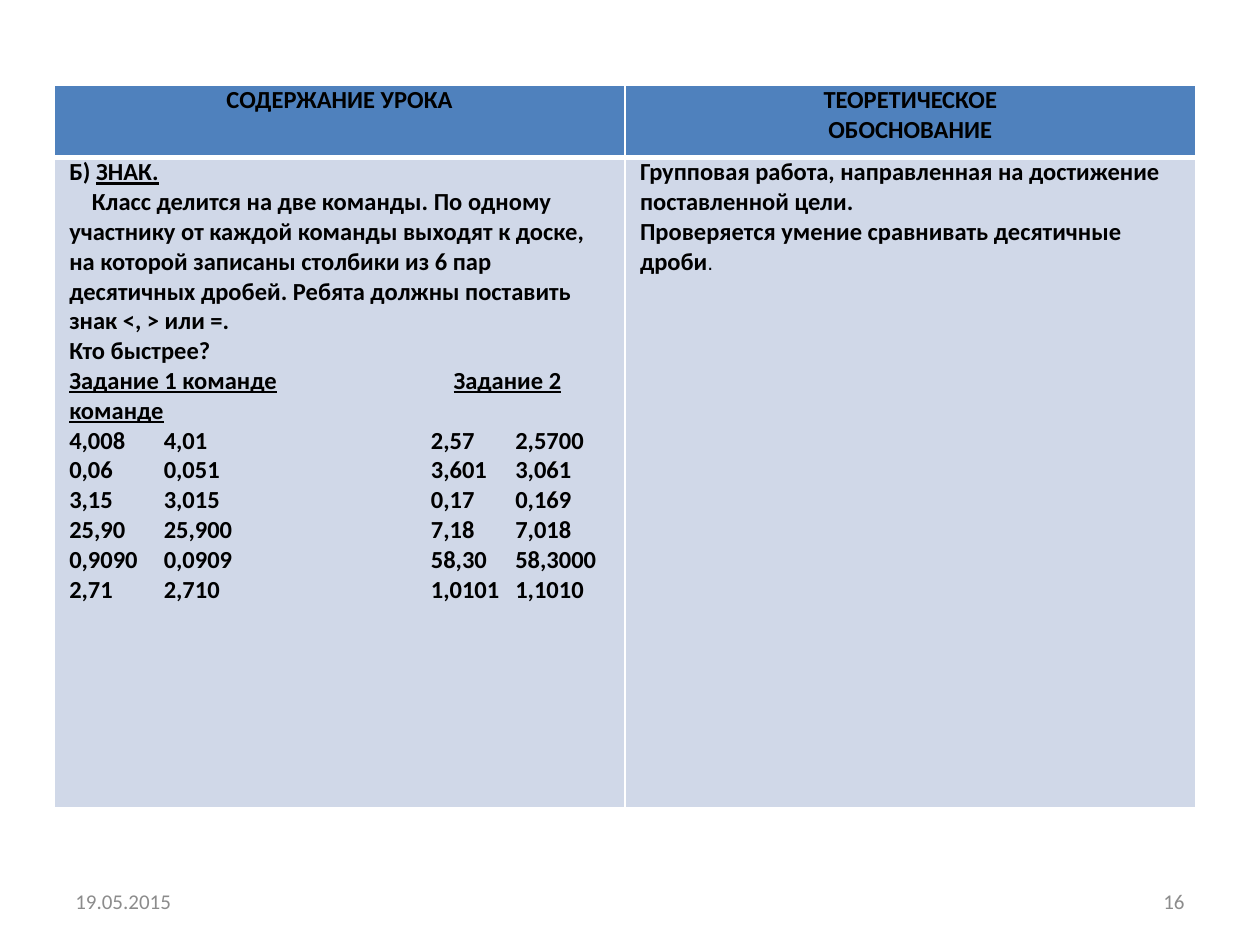
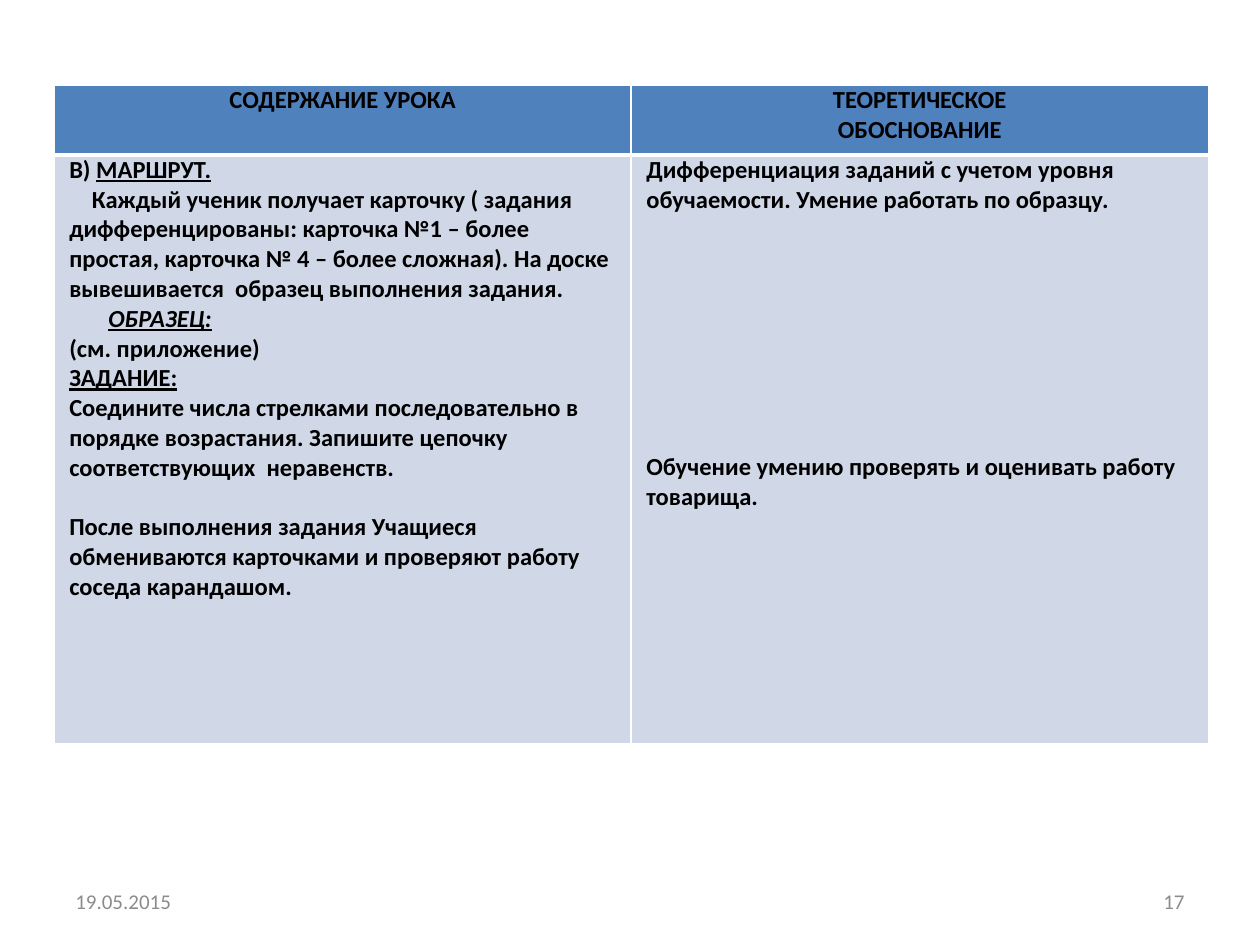
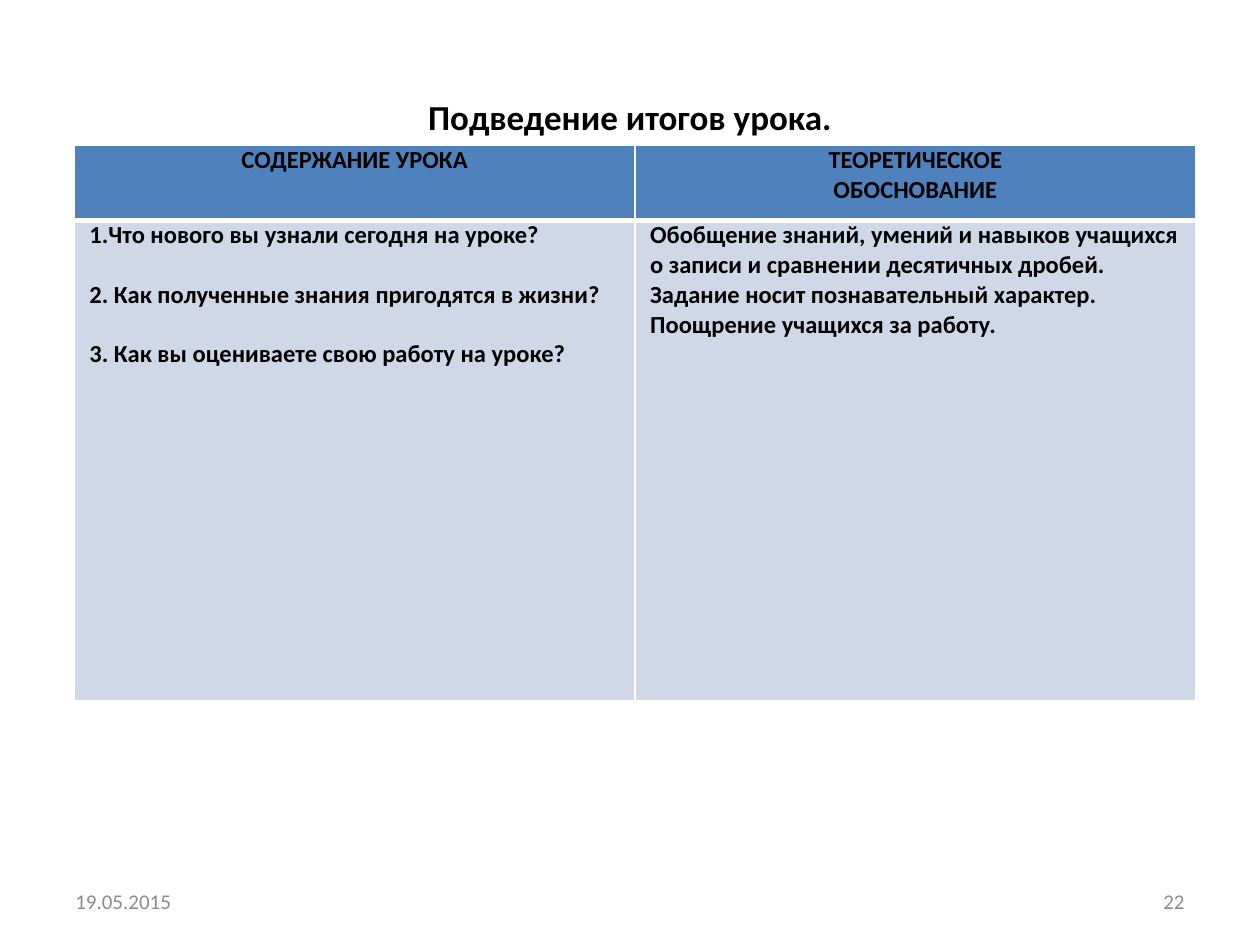
from dataclasses import dataclass

from lxml import etree
from pptx import Presentation
from pptx.dml.color import RGBColor
from pptx.enum.text import MSO_ANCHOR, PP_ALIGN
from pptx.oxml.ns import qn
from pptx.util import Inches, Pt

LEFT, MID, RIGHT = PP_ALIGN.LEFT, PP_ALIGN.CENTER, PP_ALIGN.RIGHT
CENTRE = MSO_ANCHOR.MIDDLE
BLUE = RGBColor(0x4F, 0x81, 0xBD)
PALE = RGBColor(0xD0, 0xD8, 0xE8)
WHITE = RGBColor(0xFF, 0xFF, 0xFF)
BLACK = RGBColor(0, 0, 0)
GREY = RGBColor(0x8C, 0x8C, 0x8C)
FACE = "Calibri"
TITLED, BLANK = 5, 6
LINE = 17
DATE = "19.05.2015"
HEADS = (["СОДЕРЖАНИЕ УРОКА"], ["ТЕОРЕТИЧЕСКОЕ", "ОБОСНОВАНИЕ"])


@dataclass
class Run:
    text: str
    under: bool = False
    slant: bool = False
    plain: bool = False


@dataclass
class Para:
    runs: list
    indent: float = 0
    gap: float = 0
    tabs: tuple = ()


class Deck:
    def __init__(self):
        self.prs = Presentation()
        self.prs.slide_width = Inches(10)
        self.prs.slide_height = Inches(7.5)
        self.slide = None

    def page(self, number, title=None):
        layout = self.prs.slide_layouts[TITLED if title else BLANK]
        self.slide = self.prs.slides.add_slide(layout)
        if title:
            self.title(title)
        self.note(DATE, 0.5, LEFT)
        self.note(str(number), 7.17, RIGHT)

    def font(self, para, size, color, bold):
        font = para.font
        font.name, font.size, font.bold = FACE, Pt(size), bold
        font.color.rgb = color

    def title(self, text):
        box = self.slide.shapes.title
        box.left, box.top = Inches(0.5), Inches(0.3)
        box.width, box.height = Inches(9), Inches(1.25)
        frame = box.text_frame
        frame.text = text
        frame.vertical_anchor = CENTRE
        para = frame.paragraphs[0]
        para.alignment = MID
        self.font(para, 20, BLACK, True)

    def note(self, text, left, align):
        box = self.slide.shapes.add_textbox(
            Inches(left), Inches(6.95), Inches(2.33), Inches(0.4))
        frame = box.text_frame
        frame.word_wrap = True
        frame.vertical_anchor = CENTRE
        frame.text = text
        para = frame.paragraphs[0]
        para.alignment = align
        self.font(para, 12, GREY, False)

    def table(self, left, top, width, rows, body):
        grid = self.slide.shapes.add_table(
            2, 2, Inches(left), Inches(top),
            Inches(width), Inches(sum(rows))).table
        grid.first_row = grid.horz_banding = False
        for row, high in zip(grid.rows, rows):
            row.height = Inches(high)
        for col, (head, text) in enumerate(zip(HEADS, body)):
            self.cell(grid.cell(0, col), head, BLUE, 0.07, MID, (1, 1, 1, 3))
            self.cell(grid.cell(1, col), text, PALE, 0.12, LEFT, (1, 1, 3, 1))

    def cell(self, cell, items, fill, inset, align, widths):
        cell.margin_left = cell.margin_right = Inches(inset)
        cell.margin_top = cell.margin_bottom = 0
        self.edges(cell, widths)
        cell.fill.solid()
        cell.fill.fore_color.rgb = fill
        frame = cell.text_frame
        for pos, item in enumerate(items):
            para = frame.add_paragraph() if pos else frame.paragraphs[0]
            self.para(para, item, align)

    def edges(self, cell, widths):
        props = cell._tc.get_or_add_tcPr()
        for side, width in zip("LRTB", widths):
            line = etree.SubElement(props, qn(f"a:ln{side}"), w=str(Pt(width)))
            solid = etree.SubElement(line, qn("a:solidFill"))
            etree.SubElement(solid, qn("a:srgbClr"), val=str(WHITE))

    def para(self, para, item, align):
        if isinstance(item, str):
            item = Para([Run(item)])
        para.alignment = align
        props = para._p.get_or_add_pPr()
        if item.indent:
            props.set("indent", str(Inches(item.indent)))
        if item.gap:
            para.space_before = Pt(item.gap)
        if item.tabs:
            stops = etree.SubElement(props, qn("a:tabLst"))
            for stop in item.tabs:
                etree.SubElement(stops, qn("a:tab"),
                                 pos=str(Inches(stop)), algn="l")
        self.font(para, 14, BLACK, True)
        for part in item.runs:
            run = para.add_run()
            run.text = part.text
            if part.under:
                run.font.underline = True
            if part.slant:
                run.font.italic = True
            if part.plain:
                run.font.name, run.font.size = "Arial", Pt(12)
                run.font.bold = False


PAIRS = [
    ("4,008", "4,01", "2,57", "2,5700"),
    ("0,06", "0,051", "3,601", "3,061"),
    ("3,15", "3,015", "0,17", "0,169"),
    ("25,90", "25,900", "7,18", "7,018"),
    ("0,9090", "0,0909", "58,30", "58,3000"),
    ("2,71", "2,710", "1,0101", "1,1010"),
]
STOPS = (0.75, 2.87, 3.54)

SIGN = [
    Para([Run("Б) "), Run("ЗНАК.", under=True)]),
    Para([Run("Класс делится на две команды. По одному участнику от каждой "
              "команды выходят к доске, на которой записаны столбики из 6 пар "
              "десятичных дробей. Ребята должны поставить знак <, > или =.")],
         indent=0.18),
    "Кто быстрее?",
    Para([Run("Задание 1 команде", under=True), Run("\t"),
          Run("Задание 2 команде", under=True)], tabs=(3.05,)),
] + [Para([Run("\t".join(pair))], tabs=STOPS) for pair in PAIRS]

GROUP = [
    "Групповая работа, направленная на достижение поставленной цели.",
    Para([Run("Проверяется умение сравнивать десятичные дроби"),
          Run(".", plain=True)]),
]

ROUTE = [
    Para([Run("В) "), Run("МАРШРУТ.", under=True)]),
    Para([Run("Каждый ученик получает карточку ( задания дифференцированы: "
              "карточка №1 – более простая, карточка № 4 – более сложная). "
              "На доске вывешивается  образец выполнения задания.")],
         indent=0.18),
    Para([Run("ОБРАЗЕЦ:", under=True, slant=True)], indent=0.31),
    "(см. приложение)",
    Para([Run("ЗАДАНИЕ:", under=True)]),
    "Соедините числа стрелками последовательно в порядке возрастания. "
    "Запишите цепочку соответствующих  неравенств.",
    Para([Run("После выполнения задания Учащиеся обмениваются карточками "
              "и проверяют работу соседа карандашом.")], gap=LINE),
]

LEVEL = [
    "Дифференциация заданий с учетом уровня обучаемости. "
    "Умение работать по образцу.",
    Para([Run("Обучение умению проверять и оценивать работу товарища.")],
         gap=8 * LINE),
]

ASK = [
    "1.Что нового вы узнали сегодня на уроке?",
    Para([Run("2. Как полученные знания пригодятся в жизни?")], gap=LINE),
    Para([Run("3. Как вы оцениваете свою работу на уроке?")], gap=LINE),
]

RECAP = [
    "Обобщение знаний, умений и навыков учащихся",
    "о записи и сравнении десятичных дробей.",
    "Задание носит познавательный характер.",
    "Поощрение учащихся за работу.",
]


def main():
    deck = Deck()
    deck.page(16)
    deck.table(0.43, 0.68, 9.06, (0.57, 5.16), (SIGN, GROUP))
    deck.page(17)
    deck.table(0.43, 0.68, 9.16, (0.55, 4.67), (ROUTE, LEVEL))
    deck.page(22, "Подведение итогов урока.")
    deck.table(0.59, 1.15, 8.9, (0.6, 3.81), (ASK, RECAP))
    deck.prs.save("out.pptx")


if __name__ == "__main__":
    main()
